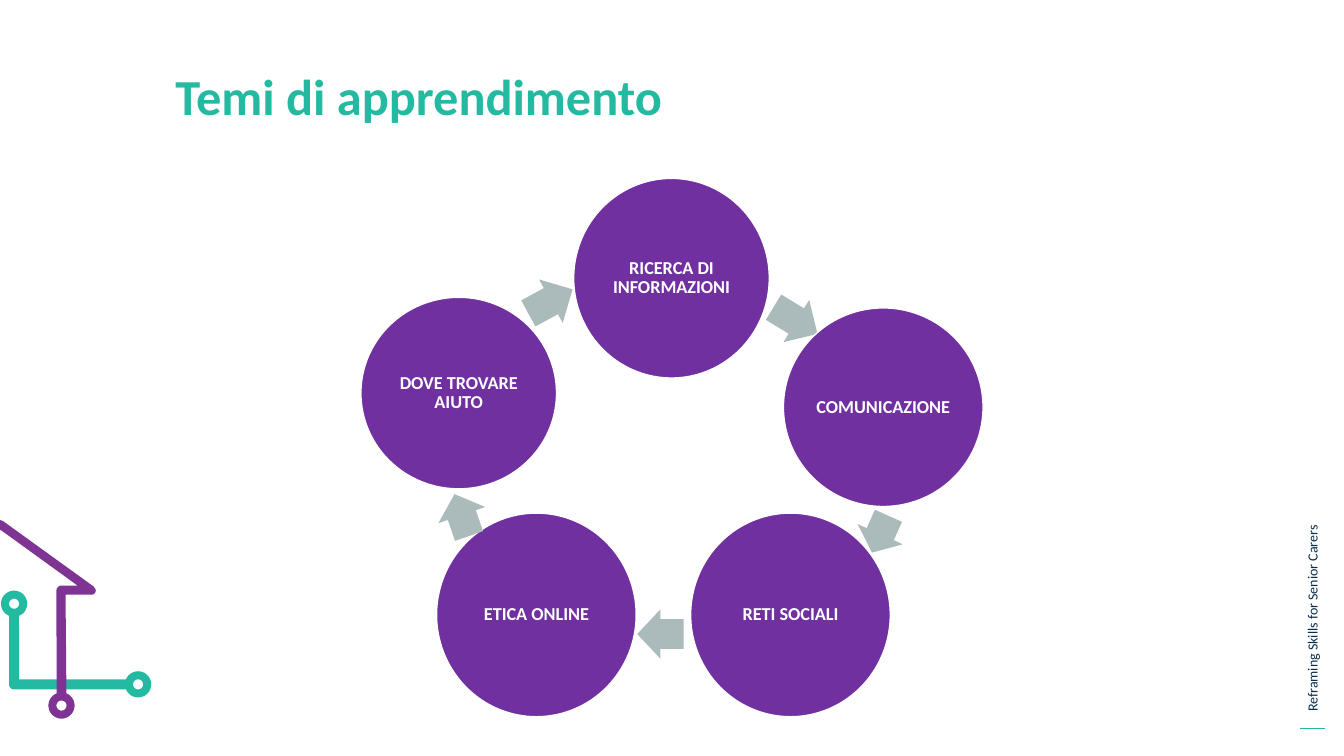
from math import cos, radians, sin

from lxml.etree import SubElement
from pptx import Presentation
from pptx.dml.color import RGBColor
from pptx.enum.shapes import MSO_CONNECTOR, MSO_SHAPE
from pptx.enum.text import MSO_ANCHOR, MSO_AUTO_SIZE, PP_ALIGN
from pptx.oxml.ns import qn
from pptx.util import Inches, Pt

SLIDE_WIDTH, SLIDE_HEIGHT = 13.33, 7.5
FONT = "Calibri"
TEAL, PURPLE, VIOLET = "24BAA2", "7030A0", "7F3494"
GREY, NAVY, WHITE = "ABBABA", "092E4B", "FFFFFF"

TOPICS = [
    ("RICERCA DI INFORMAZIONI", 3.08, 0.99, 1.94, 1.98),
    ("COMUNICAZIONE", 5.18, 2.27, 1.98, 1.97),
    ("RETI SOCIALI", 4.26, 4.33, 1.98, 2.02),
    ("ETICA ONLINE", 1.74, 4.33, 1.98, 2.02),
    ("DOVE TROVARE AIUTO", 0.97, 2.13, 1.94, 1.9),
]
ARROWS = [
    (4.31, 1.41, 0.51, 31.3),
    (5.15, 3.53, 0.4, 114.1),
    (2.97, 4.52, 0.46, 180),
    (1.0, 3.34, 0.44, 250.9),
    (1.88, 1.22, 0.5, 331.5),
]
ARROW_HEIGHT = 0.49


def color(value):
    """Turn a hex string into a colour."""
    return RGBColor.from_string(value)


def paint(shape, fill, line=None):
    """Give a shape a flat fill and an optional one-point outline."""
    shape.shadow.inherit = False
    shape.fill.solid()
    shape.fill.fore_color.rgb = color(fill)
    if line:
        shape.line.color.rgb = color(line)
        shape.line.width = Pt(1)
    else:
        shape.line.fill.background()


def write(shape, text, size, hue, bold, align, anchor, inset=None):
    """Set and format the single paragraph of a shape."""
    frame = shape.text_frame
    frame.text = text
    frame.word_wrap = True
    frame.auto_size = MSO_AUTO_SIZE.NONE
    frame.vertical_anchor = anchor
    if inset is not None:
        frame.margin_left = frame.margin_right = Inches(inset)
        frame.margin_top = frame.margin_bottom = Inches(inset)
    paragraph = frame.paragraphs[0]
    paragraph.alignment = align
    font = paragraph.runs[0].font
    font.name, font.size, font.bold = FONT, Pt(size), bold
    font.color.rgb = color(hue)
    return paragraph


def add_centered(slide, preset, x, y, width, height):
    """Add a preset shape around a centre point."""
    return slide.shapes.add_shape(
        preset, Inches(x - width / 2), Inches(y - height / 2), Inches(width), Inches(height)
    )


def add_title(slide, left, top, width, height):
    """Place the slide title in its box."""
    title = slide.shapes.title
    title.left, title.top = Inches(left), Inches(top)
    title.width, title.height = Inches(width), Inches(height)
    paragraph = write(title, "Temi di apprendimento", 36, TEAL, True, PP_ALIGN.LEFT, MSO_ANCHOR.TOP)
    paragraph.line_spacing = 0.9


def add_side_label(slide, left, top, width, height):
    """Add the vertical label and the short rule below it."""
    center_x, center_y = left + width / 2, top + height / 2
    label = slide.shapes.add_textbox(
        Inches(center_x - height / 2), Inches(center_y - width / 2), Inches(height), Inches(width)
    )
    label.rotation = 270
    write(label, "Reframing Skills for Senior Carers", 10, NAVY, False, PP_ALIGN.LEFT, MSO_ANCHOR.TOP)
    rule_y = Inches(top + height + 0.07)
    rule = slide.shapes.add_connector(
        MSO_CONNECTOR.STRAIGHT, Inches(left + width - 0.01), rule_y, Inches(left + 0.01), rule_y
    )
    rule.line.color.rgb = color(TEAL)
    rule.line.width = Pt(0.75)
    SubElement(rule._element.spPr, qn("a:effectLst"))


def arc(x, y, radius, start, end, steps=32):
    """Return points along an arc, with angles in degrees."""
    angles = [radians(start + (end - start) * step / steps) for step in range(steps + 1)]
    return [(x + radius * cos(angle), y + radius * sin(angle)) for angle in angles]


def add_outline(slide, left, top, contours, fill):
    """Draw one filled freeform from several closed contours."""
    placed = [[(Inches(left + x), Inches(top + y)) for x, y in contour] for contour in contours]
    builder = slide.shapes.build_freeform(*placed[0][0], scale=1.0)
    builder.add_line_segments(placed[0][1:], close=True)
    for contour in placed[1:]:
        builder.move_to(*contour[0])
        builder.add_line_segments(contour[1:], close=True)
    paint(builder.convert_to_shape(), fill)


def add_house_motif(slide, left, top):
    """Draw the circuit and house lines in the lower left corner."""
    upper, right, lower = (0.14, 0.83), (1.37, 1.63), (0.61, 1.84)
    node, hole, half = 0.13, 0.05, 0.05
    corner = (upper[0], right[1])
    circuit = (
        arc(*upper, node, 68, -248)
        + arc(*corner, half, 180, 90, 8)
        + arc(*right, node, 158, -158)
        + [(corner[0] + half, corner[1] - half)]
    )
    holes = [arc(*center, hole, 0, 360) for center in (upper, right)]
    add_outline(slide, left, top, [circuit, *holes], TEAL)

    house = (
        [(0, 0), (0.03, 0.01), (0.93, 0.66)]
        + arc(0.91, 0.7, 0.04, -50, 90, 8)
        + [(0.65, 0.74)]
        + arc(*lower, node, -68, 248)
        + arc(0.61, 0.7, half, 180, 270, 8)
        + [(0.77, 0.65), (0.01, 0.1), (0, 0.1)]
    )
    add_outline(slide, left, top, [house, arc(*lower, hole, 0, 360)], VIOLET)


def add_topic_cycle(slide, left, top):
    """Draw the ring of topics, each followed by its arrow."""
    for (text, x, y, width, height), (arrow_x, arrow_y, length, angle) in zip(TOPICS, ARROWS):
        circle = add_centered(slide, MSO_SHAPE.OVAL, left + x, top + y, width, height)
        paint(circle, PURPLE, WHITE)
        paragraph = write(circle, text, 13, WHITE, True, PP_ALIGN.CENTER, MSO_ANCHOR.MIDDLE, 0.02)
        paragraph.line_spacing = 0.9
        arrow = add_centered(
            slide, MSO_SHAPE.RIGHT_ARROW, left + arrow_x, top + arrow_y, length, ARROW_HEIGHT
        )
        arrow.adjustments[0], arrow.adjustments[1] = 0.6, 0.5
        arrow.rotation = angle
        paint(arrow, GREY)


def main():
    """Build and save the slide."""
    presentation = Presentation()
    presentation.slide_width = Inches(SLIDE_WIDTH)
    presentation.slide_height = Inches(SLIDE_HEIGHT)
    slide = presentation.slides.add_slide(presentation.slide_layouts[5])
    add_side_label(slide, 12.88, 3.69, 0.27, 3.47)
    add_house_motif(slide, 0, 5.16)
    add_title(slide, 1.64, 0.66, 10.81, 1.11)
    add_topic_cycle(slide, 3.58, 1.77)
    presentation.save("out.pptx")


if __name__ == "__main__":
    main()
